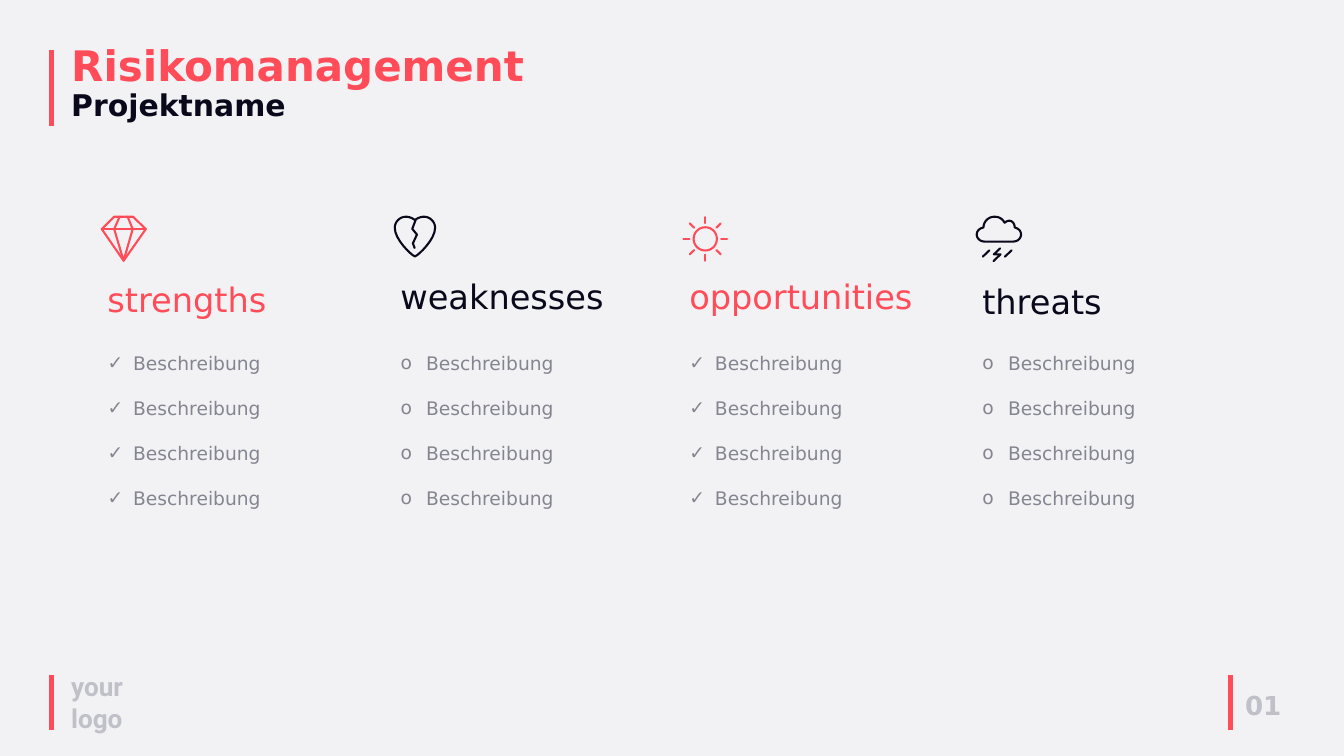
import math

import pptx
import pptx.dml.color
import pptx.enum.shapes
import pptx.enum.text
import pptx.oxml.ns
import pptx.util
from lxml import etree

Inches = pptx.util.Inches
Pt = pptx.util.Pt
RGBColor = pptx.dml.color.RGBColor
MSO_ANCHOR = pptx.enum.text.MSO_ANCHOR
PP_ALIGN = pptx.enum.text.PP_ALIGN
qn = pptx.oxml.ns.qn

RED = RGBColor(0xFF, 0x4C, 0x58)
NAVY = RGBColor(0x0A, 0x09, 0x1B)
GRAY = RGBColor(0x85, 0x85, 0x91)
SILVER = RGBColor(0xC0, 0xC0, 0xC8)
BACKGROUND = RGBColor(0xF2, 0xF2, 0xF5)
FONT = "DejaVu Sans"


def curve(points, steps=8):
    result = [points[0]]
    for start in range(0, len(points) - 1, 3):
        a, b, c, d = points[start:start + 4]
        for step in range(1, steps + 1):
            t = step / steps
            u = 1 - t
            weights = (u ** 3, 3 * u * u * t, 3 * u * t * t, t ** 3)
            result.append(tuple(
                sum(w * p[axis] for w, p in zip(weights, (a, b, c, d)))
                for axis in (0, 1)))
    return result


def around(center, radius, degrees):
    angle = math.radians(degrees)
    return (center[0] + radius * math.cos(angle),
            center[1] + radius * math.sin(angle))


HEART_LEFT = curve([
    (315, 65), (280, 35), (230, 15), (180, 15), (90, 15), (15, 90), (15, 180),
    (15, 350), (250, 580), (315, 605)])
SUN_CENTER = (335, 345)

DIAMOND = [
    [(200, 15), (480, 15), (670, 200), (340, 670), (15, 200), (200, 15)],
    [(15, 200), (670, 200)],
    [(280, 15), (200, 200), (340, 670), (475, 200), (400, 15)],
]
BROKEN_HEART = [
    HEART_LEFT + [(630 - x, y) for x, y in reversed(HEART_LEFT)],
    [(325, 65), (275, 195), (345, 280), (285, 410), (310, 480)],
]
SUN = [[around(SUN_CENTER, 173, degrees) for degrees in range(0, 361, 10)]] + [
    [around(SUN_CENTER, 235, degrees), around(SUN_CENTER, 325, degrees)]
    for degrees in range(0, 360, 45)]
STORM_CLOUD = [
    [(130, 385)] + curve([
        (560, 385), (620, 385), (675, 340), (675, 280),
        (675, 230), (640, 190), (580, 175), (580, 110), (540, 75), (500, 75),
        (470, 75), (450, 90), (430, 105), (400, 50), (350, 15), (280, 15),
        (190, 15), (120, 80), (115, 175), (50, 190), (15, 230), (15, 280),
        (15, 340), (70, 385), (130, 385)]),
    [(365, 485), (270, 575), (370, 575), (265, 675)],
    [(205, 515), (105, 610)],
    [(535, 515), (435, 610)],
]

TITLE, SUBTITLE = "Risikomanagement", "Projektname"
ITEMS = ["Beschreibung"] * 4
COLUMNS = [
    ("strengths", 1.5, 4.1, RED, "✓", DIAMOND),
    ("weaknesses", 5.86, 4.06, NAVY, "o", BROKEN_HEART),
    ("opportunities", 10.16, 4.05, RED, "✓", SUN),
    ("threats", 14.52, 4.13, NAVY, "o", STORM_CLOUD),
]
ACCENT_BARS = [(0.77, 0.75, 1.88), (0.77, 10.05, 10.86), (18.31, 10.05, 10.86)]
FOOTER_TEXTS = [
    ("your logo", (0.96, 9.93, 1.19, 1.04), "Roboto"),
    ("01", (18.43, 10.21, 1.3, 0.57), FONT),
]


def place(shape, left, top, width, height):
    shape.left, shape.top = Inches(left), Inches(top)
    shape.width, shape.height = Inches(width), Inches(height)


def add_run(paragraph, text, size, color, bold=False, font=FONT):
    run = paragraph.add_run()
    run.text = text
    run.font.name = font
    run.font.size = Pt(size)
    run.font.bold = bold
    run.font.color.rgb = color


def add_text(slide, text, box, size, color, bold=False, font=FONT):
    shape = slide.shapes.add_textbox(*map(Inches, box))
    shape.text_frame.word_wrap = True
    add_run(shape.text_frame.paragraphs[0], text, size, color, bold, font)


def add_accent_bar(slide, x, top, bottom):
    connector = slide.shapes.add_connector(
        pptx.enum.shapes.MSO_CONNECTOR.STRAIGHT,
        Inches(x), Inches(top), Inches(x), Inches(bottom))
    connector.line.color.rgb = RED
    connector.line.width = Pt(5)
    etree.SubElement(connector._element.spPr, qn("a:effectLst"))


def add_icon(slide, strokes, left, top, color):
    builder = slide.shapes.build_freeform(*strokes[0][0], scale=914.4)
    for index, stroke in enumerate(strokes):
        if index:
            builder.move_to(*stroke[0])
        builder.add_line_segments(stroke[1:], close=False)
    shape = builder.convert_to_shape(Inches(left), Inches(top))
    shape.shadow.inherit = False
    shape.fill.background()
    shape.line.color.rgb = color
    shape.line.width = Pt(2.25)
    shape.line._get_or_add_ln().set("cap", "rnd")


def fill_title(shape):
    place(shape, 0.96, 0.62, 8.21, 1.27)
    shape.text_frame.vertical_anchor = MSO_ANCHOR.MIDDLE
    shape.text_frame.auto_size = pptx.enum.text.MSO_AUTO_SIZE.NONE
    paragraph = shape.text_frame.paragraphs[0]
    paragraph.alignment = PP_ALIGN.LEFT
    paragraph.line_spacing = 0.9
    add_run(paragraph, TITLE, 45, RED, True)
    paragraph.add_line_break()
    add_run(paragraph, SUBTITLE, 32, NAVY, True)


def fill_list(shape, left, bullet):
    place(shape, left, 5.18, 3.92, 2.79)
    frame = shape.text_frame
    frame.vertical_anchor = MSO_ANCHOR.TOP
    frame.auto_size = pptx.enum.text.MSO_AUTO_SIZE.NONE
    for index, item in enumerate(ITEMS):
        paragraph = frame.add_paragraph() if index else frame.paragraphs[0]
        paragraph.space_before = Pt(0)
        paragraph.space_after = Pt(24.5)
        properties = paragraph._p.get_or_add_pPr()
        properties.set("marL", str(Inches(0.38)))
        properties.set("indent", str(-Inches(0.38)))
        etree.SubElement(properties, qn("a:buFont")).set("typeface", FONT)
        etree.SubElement(properties, qn("a:buChar")).set("char", bullet)
        add_run(paragraph, item, 20, GRAY)


def main():
    presentation = pptx.Presentation()
    presentation.slide_width = Inches(20)
    presentation.slide_height = Inches(11.25)
    slide = presentation.slides.add_slide(
        presentation.slide_layouts.get_by_name("Comparison"))
    slide.background.fill.solid()
    slide.background.fill.fore_color.rgb = BACKGROUND

    for bar in ACCENT_BARS:
        add_accent_bar(slide, *bar)
    for text, box, font in FOOTER_TEXTS:
        add_text(slide, text, box, 28, SILVER, True, font)

    title, *lists = slide.placeholders
    fill_title(title)
    for body, column in zip(lists, COLUMNS):
        heading, left, top, color, bullet, icon = column
        add_text(slide, heading, (left, top, 4, 0.71), 36, color)
        add_icon(slide, icon, left, 3.21, color)
        fill_list(body, left, bullet)
    presentation.save("out.pptx")


if __name__ == "__main__":
    main()
